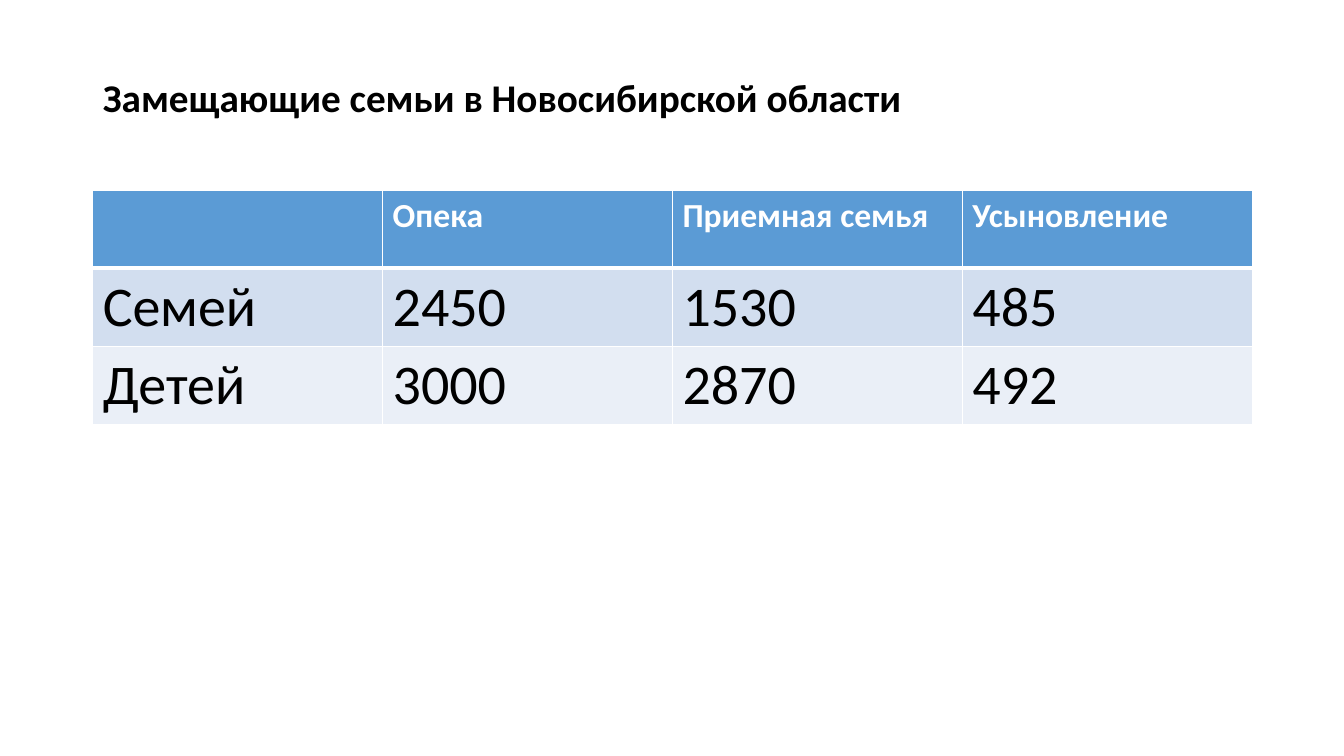
"""Build a slide with a table of foster families in the Novosibirsk region."""
import pptx
import pptx.util
import pptx.dml.color
import pptx.enum.text
import pptx.oxml.ns
import lxml.etree

Inches = pptx.util.Inches
RGBColor = pptx.dml.color.RGBColor
BLACK = RGBColor(0x00, 0x00, 0x00)
WHITE = RGBColor(0xFF, 0xFF, 0xFF)
BLUE = RGBColor(0x5B, 0x9B, 0xD5)
PALE = RGBColor(0xD2, 0xDE, 0xEF)
LIGHT = RGBColor(0xEA, 0xEF, 0xF7)


def write(para, text, size, color, bold):
    run = para.add_run()
    run.text = text
    run.font.name = "Calibri"
    run.font.size = pptx.util.Pt(size)
    run.font.color.rgb = color
    run.font.bold = bold


def edge(cell, side, width):
    qn = pptx.oxml.ns.qn
    props = cell._tc.get_or_add_tcPr()
    line = lxml.etree.SubElement(props, qn(f"a:ln{side}"), w=str(pptx.util.Pt(width)))
    fill = lxml.etree.SubElement(line, qn("a:solidFill"))
    lxml.etree.SubElement(fill, qn("a:srgbClr"), val=str(WHITE))


deck = pptx.Presentation()
deck.slide_width = Inches(13.33)
deck.slide_height = Inches(7.5)
slide = deck.slides.add_slide(deck.slide_layouts[5])

title = slide.shapes.title
title.left, title.top = Inches(0.92), Inches(0.4)
title.width, title.height = Inches(11.5), Inches(1.18)
frame = title.text_frame
frame.word_wrap = True
frame.vertical_anchor = pptx.enum.text.MSO_ANCHOR.MIDDLE
head = frame.paragraphs[0]
head.alignment = pptx.enum.text.PP_ALIGN.LEFT
head.line_spacing = 0.9
write(head, "Замещающие семьи в Новосибирской области", 28, BLACK, True)

data = [
    ["", "Опека", "Приемная семья", "Усыновление"],
    ["Семей", "2450", "1530", "485"],
    ["Детей", "3000", "2870", "492"],
]
styles = [(BLUE, 24, WHITE, True), (PALE, 40, BLACK, False), (LIGHT, 40, BLACK, False)]
table = slide.shapes.add_table(
    3, 4, Inches(0.92), Inches(1.89), Inches(11.5), Inches(2.3)
).table
for row, (texts, style) in enumerate(zip(data, styles)):
    back, size, color, bold = style
    for col, text in enumerate(texts):
        cell = table.cell(row, col)
        for side in "LRTB":
            thick = (row, side) in [(0, "B"), (1, "T")]
            edge(cell, side, 3 if thick else 1)
        cell.fill.solid()
        cell.fill.fore_color.rgb = back
        if text:
            write(cell.text_frame.paragraphs[0], text, size, color, bold)

deck.save("out.pptx")
